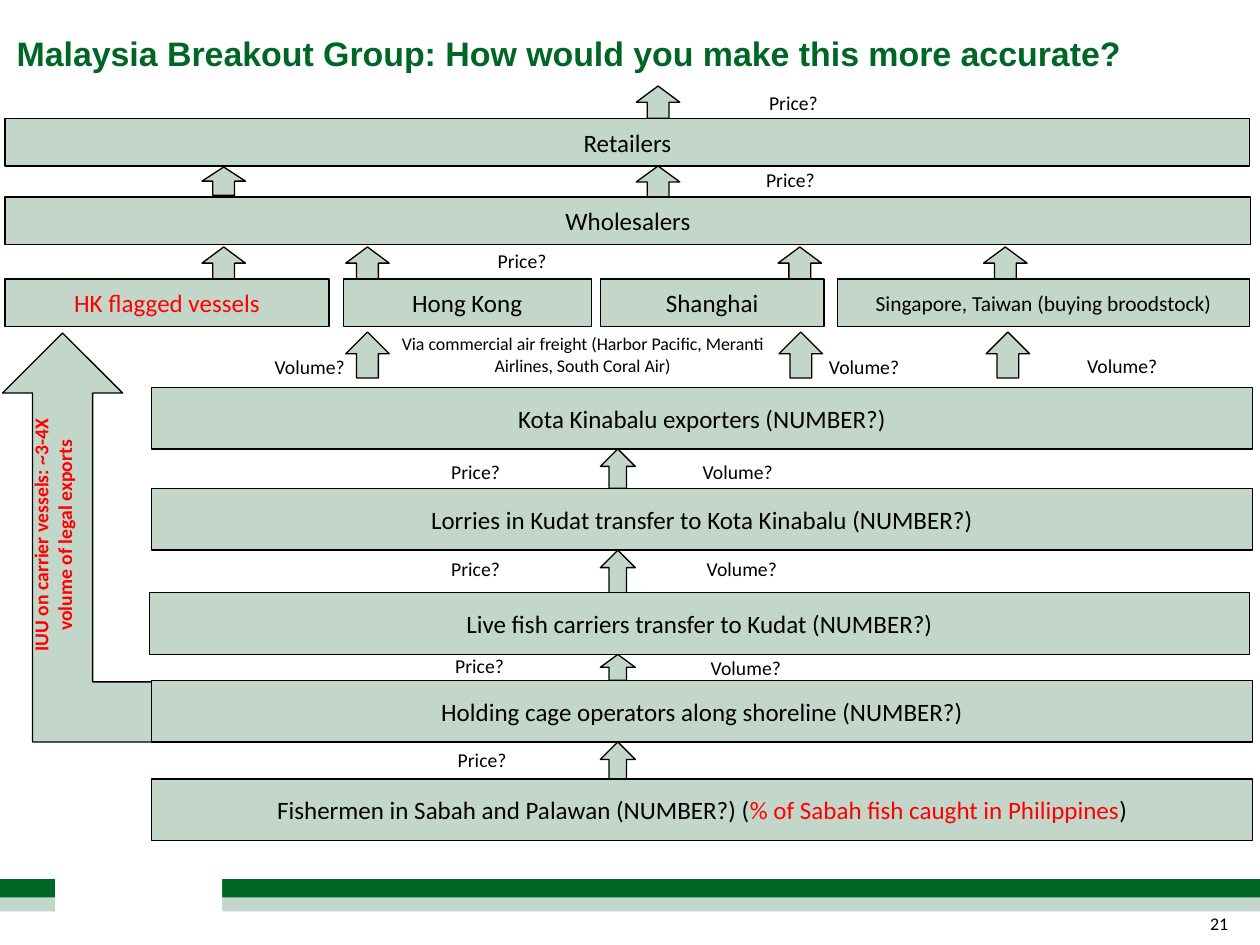
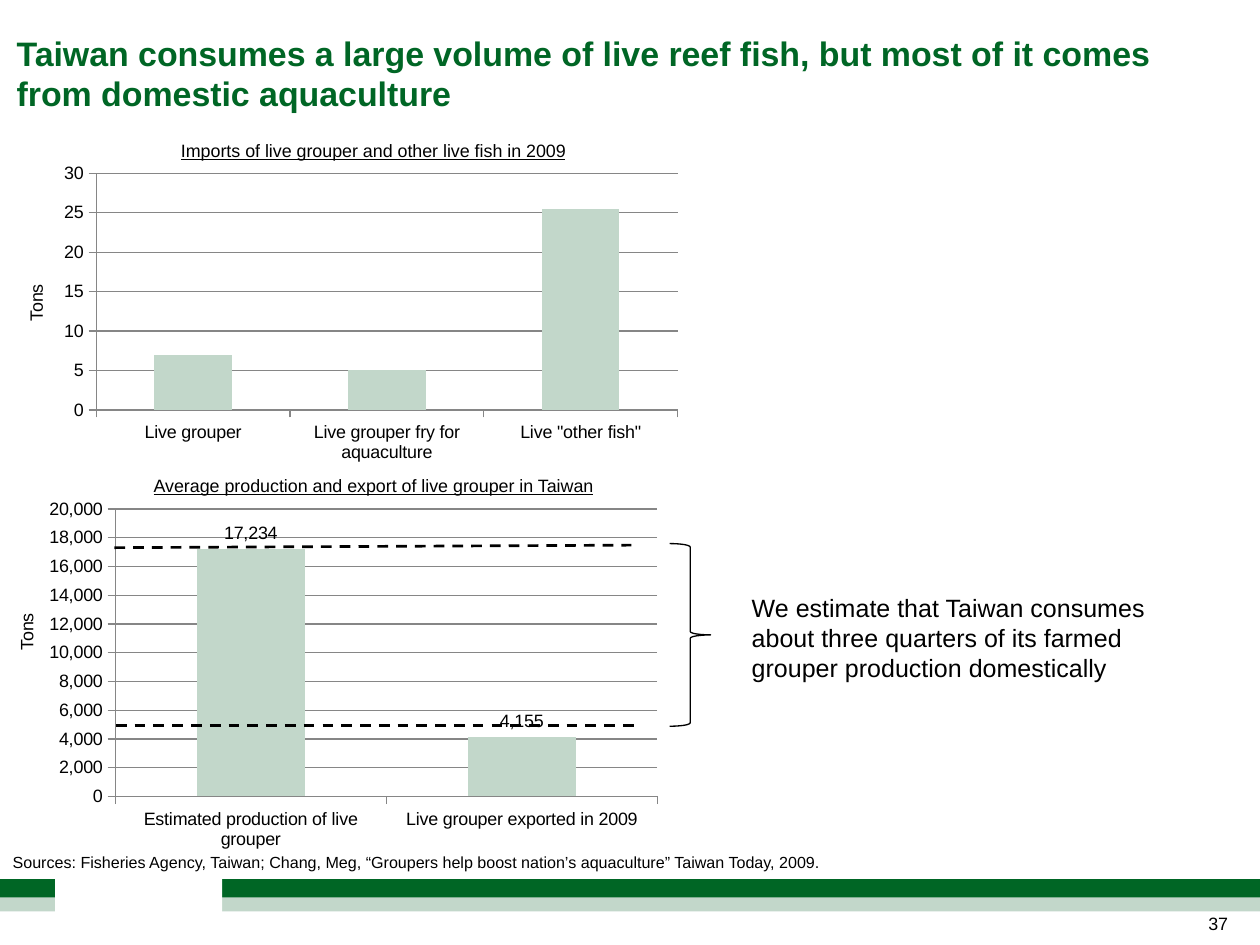
from itertools import pairwise

from lxml import etree
from pptx import Presentation
from pptx import util as u
from pptx.chart import data as cd
from pptx.dml import color as dml
from pptx.enum import chart as ch
from pptx.enum import dml as line_kinds
from pptx.enum import shapes, text
from pptx.oxml import ns

COLORS = {"green": "006625", "sage": "C2D7CA", "black": "000000",
          "red": "FF0000", "white": "FFFFFF", "grey": "868686"}
ALIGN = {"l": text.PP_ALIGN.LEFT, "c": text.PP_ALIGN.CENTER, "r": text.PP_ALIGN.RIGHT}
SHAPE = shapes.MSO_SHAPE
WIDTH, HEIGHT = 24.89, 18.67


def rgb(name):
    return dml.RGBColor.from_string(COLORS[name])


def apply(obj, **values):
    for name, value in values.items():
        setattr(obj, name, value)


class Deck:
    def __init__(self):
        self.prs = Presentation()
        apply(self.prs, slide_width=u.Cm(WIDTH), slide_height=u.Cm(HEIGHT))
        self.s = None
        self.font = "Arial"

    def slide(self, title, number, font, title_height):
        self.s = self.prs.slides.add_slide(self.prs.slide_layouts[6])
        self.font = font
        self.shape(SHAPE.RECTANGLE, 0, 17.37, WIDTH, 0.63, "green", None)
        self.shape(SHAPE.RECTANGLE, 0, 17.73, WIDTH, 0.28, "sage", None)
        self.shape(SHAPE.RECTANGLE, 1.09, 17.17, 3.3, 1.45, "white", None)
        self.label(title, 0.33, 0.64, 23.95, title_height, size=19, color="green",
                   align="l", inset=0, font="Arial", bold=True)
        self.label(number, 23.26, 18.03, 1, 0.43, size=10, align="r", inset=0)

    def add_runs(self, sp, runs, size, color, align, font=None, **style):
        p = sp.text_frame.paragraphs[0]
        p.alignment = ALIGN[align]
        for words, run_color in [(runs, color)] if isinstance(runs, str) else runs:
            r = p.add_run()
            r.text = words
            apply(r.font, name=font or self.font, size=u.Pt(size), **style)
            r.font.color.rgb = rgb(run_color)

    def label(self, runs, x, y, w, h=0.74, size=11, color="black", align="c",
              inset=None, wrap=True, rotation=0, font=None, **style):
        sp = self.s.shapes.add_textbox(*map(u.Cm, (x, y, w, h)))
        sp.rotation = rotation
        tf = sp.text_frame
        tf.word_wrap = wrap
        if inset is not None:
            self.insets(tf, inset)
        self.add_runs(sp, runs, size, color, align, font, **style)

    def insets(self, tf, size):
        for side in ("left", "top", "right", "bottom"):
            setattr(tf, f"margin_{side}", u.Cm(size))

    def shape(self, kind, x, y, w, h, fill="sage", line="black"):
        sp = self.s.shapes.add_shape(kind, *map(u.Cm, (x, y, w, h)))
        sp.shadow.inherit = False
        sp.fill.solid()
        sp.fill.fore_color.rgb = rgb(fill)
        if line:
            sp.line.color.rgb = rgb(line)
            sp.line.width = u.Pt(0.75)
        else:
            sp.line.fill.background()
        return sp

    def box(self, runs, x, y, w, h, size=14, color="black"):
        sp = self.shape(SHAPE.RECTANGLE, x, y, w, h)
        apply(sp.text_frame, word_wrap=True, vertical_anchor=text.MSO_ANCHOR.MIDDLE)
        self.insets(sp.text_frame, 0.2)
        self.add_runs(sp, runs, size, color, "c")

    def up_arrow(self, x, y, h, w=0.86):
        self.shape(SHAPE.UP_ARROW, x, y, w, h)

    def dashed(self, x1, y1, x2, y2):
        c = self.s.shapes.add_connector(shapes.MSO_CONNECTOR.STRAIGHT,
                                        *map(u.Cm, (x1, y1, x2, y2)))
        apply(c.line, width=u.Pt(1.5), dash_style=line_kinds.MSO_LINE.DASH)
        c.line.color.rgb = rgb("black")
        etree.SubElement(c._element.spPr, ns.qn("a:effectLst"))

    def columns(self, points, frame, plot_area, top, step, labels=False):
        data = cd.CategoryChartData(number_format="#,##0")
        data.categories = list(points)
        data.add_series("Series 1", points.values())
        chart = self.s.shapes.add_chart(ch.XL_CHART_TYPE.COLUMN_CLUSTERED,
                                        *map(u.Cm, frame), data).chart
        apply(chart, has_legend=False, has_title=False)
        apply(chart.font, name=self.font, size=u.Pt(10))
        chart.font.color.rgb = rgb("black")
        plot = chart.plots[0]
        apply(plot, vary_by_categories=False, gap_width=150, has_data_labels=labels)
        fill = plot.series[0].format.fill
        fill.solid()
        fill.fore_color.rgb = rgb("sage")
        if labels:
            apply(plot.data_labels, show_value=True, number_format="#,##0",
                  number_format_is_linked=False,
                  position=ch.XL_LABEL_POSITION.OUTSIDE_END)
        value = chart.value_axis
        apply(value, minimum_scale=0, maximum_scale=top, major_unit=step,
              has_major_gridlines=True)
        apply(value.tick_labels, number_format="#,##0", number_format_is_linked=False)
        for axis in (value, chart.category_axis):
            axis.major_tick_mark = ch.XL_TICK_MARK.OUTSIDE
        for part in (value, chart.category_axis, value.major_gridlines):
            part.format.line.color.rgb = rgb("grey")
            part.format.line.width = u.Pt(0.75)
        self.place_plot(chart, plot_area)

    def place_plot(self, chart, plot_area):
        area = chart._chartSpace.chart.plotArea
        for old in area.findall(ns.qn("c:layout")):
            area.remove(old)
        layout = etree.Element(ns.qn("c:layout"))
        area.insert(0, layout)
        manual = etree.SubElement(layout, ns.qn("c:manualLayout"))
        settings = [("layoutTarget", "inner"), ("xMode", "edge"), ("yMode", "edge"),
                    *zip("xywh", plot_area)]
        for tag, val in settings:
            etree.SubElement(manual, ns.qn(f"c:{tag}")).set("val", str(val))


def supply_chain(d):
    d.slide("Malaysia Breakout Group: How would you make this more accurate?",
            "21", "Calibri", 0.81)
    iuu = d.shape(SHAPE.BENT_UP_ARROW, 0.05, 6.58, 4.75, 8.08)
    iuu._element.spPr.find(ns.qn("a:xfrm")).set("flipH", "1")
    d.label("IUU on carrier vessels: ~3-4X volume of legal exports",
            -1.88, 9.98, 5.84, 1.19, color="red", rotation=270, bold=True)

    stages = [
        ("Kota Kinabalu exporters (NUMBER?)", 3, 7.65),
        ("Lorries in Kudat transfer to Kota Kinabalu (NUMBER?)", 3, 9.65),
        ("Live fish carriers transfer to Kudat (NUMBER?)", 2.95, 11.71),
        ("Holding cage operators along shoreline (NUMBER?)", 3, 13.44),
        ([("Fishermen in Sabah and Palawan (NUMBER?) (", "black"),
          ("% of Sabah fish caught in Philippines", "red"), (")", "black")], 3, 15.39),
    ]
    stage_h = 1.22
    for (_, _, upper), (_, _, lower) in pairwise(stages):
        d.up_arrow(11.86, upper + stage_h, lower - upper - stage_h, w=0.69)
    for runs, x, y in stages:
        d.box(runs, x, y, 21.74, stage_h)

    row_h = 0.94
    for x, y, h in [(12.57, 1.7, 0.64), (12.57, 3.28, 0.63), (3.99, 3.3, 0.56)]:
        d.up_arrow(x, y, h)
    for x in (3.99, 6.83, 15.37, 19.43):
        d.up_arrow(x, 4.88, 0.64)
    for x in (6.83, 15.39, 19.48):
        d.up_arrow(x, 6.56, 0.91)
    d.box("Retailers", 0.1, 2.34, 24.59, row_h)
    d.box("Wholesalers", 0.1, 3.89, 24.61, row_h)
    for name, x, w, size, color in [
        ("HK flagged vessels", 0.1, 6.4, 14, "red"),
        ("Hong Kong", 6.78, 4.9, 14, "black"),
        ("Shanghai", 11.86, 4.42, 14, "black"),
        ("Singapore, Taiwan (buying broodstock)", 16.54, 8.15, 12, "black"),
    ]:
        d.box(name, x, 5.51, w, row_h, size, color)

    for x, y in [(14.94, 1.68), (14.88, 3.2), (9.58, 4.8), (8.66, 8.97),
                 (8.66, 10.87), (8.74, 12.8), (8.79, 14.66)]:
        d.label("Price?", x, y, 1.47, wrap=False)
    for x, y, w in [(4.7, 6.88, 2.84), (15.65, 6.88, 2.84), (20.19, 6.86, 3.96),
                    (12.62, 8.97, 3.91), (12.7, 10.87, 3.91), (12.78, 12.83, 3.91)]:
        d.label("Volume?", x, y, w)
    d.label("Via commercial air freight (Harbor Pacific, Meranti Airlines, South Coral Air)",
            7.65, 6.45, 7.72, 1.12, size=10)


def taiwan_market(d):
    d.slide("Taiwan consumes a large volume of live reef fish, but most of it comes "
            "from domestic aquaculture", "37", "Arial", 1.63)
    d.columns({"Live grouper": 7, "Live grouper fry for aquaculture": 5,
               'Live "other fish"': 25.5},
              (1.02, 3.12, 12.62, 6.15), (0.07, 0.05, 0.91, 0.76), 30, 5)
    d.columns({"Estimated production of live grouper": 17234,
               "Live grouper exported in 2009": 4155},
              (0.66, 9.7, 12.45, 7.19), (0.13, 0.05, 0.86, 0.79), 20000, 2000,
              labels=True)
    for heading, y in [("Imports of live grouper and other live fish in 2009", 2.64),
                       ("Average production and export of live grouper in Taiwan", 9.25)]:
        d.label(heading, 1.37, y, 12.01, 0.69, size=10, underline=True)
    for x, y in [(-0.34, 5.64), (-0.53, 12.14)]:
        d.label("Tons", x, y, 2.11, 0.69, size=10, rotation=270)
    d.dashed(2.26, 10.82, 12.47, 10.77)
    d.dashed(2.29, 14.33, 12.55, 14.33)
    d.shape(SHAPE.RIGHT_BRACE, 13.23, 10.74, 0.81, 3.61, "white")
    d.label("We estimate that Taiwan consumes about three quarters of its farmed "
            "grouper production domestically", 14.6, 11.58, 8.41, 1.93, size=14, align="l")
    d.label("Sources: Fisheries Agency, Taiwan; Chang, Meg, “Groupers help boost "
            "nation’s aquaculture” Taiwan Today, 2009.",
            0, 16.71, WIDTH, 0.64, size=9, align="l")


def main():
    d = Deck()
    supply_chain(d)
    taiwan_market(d)
    d.prs.save("out.pptx")


if __name__ == "__main__":
    main()
